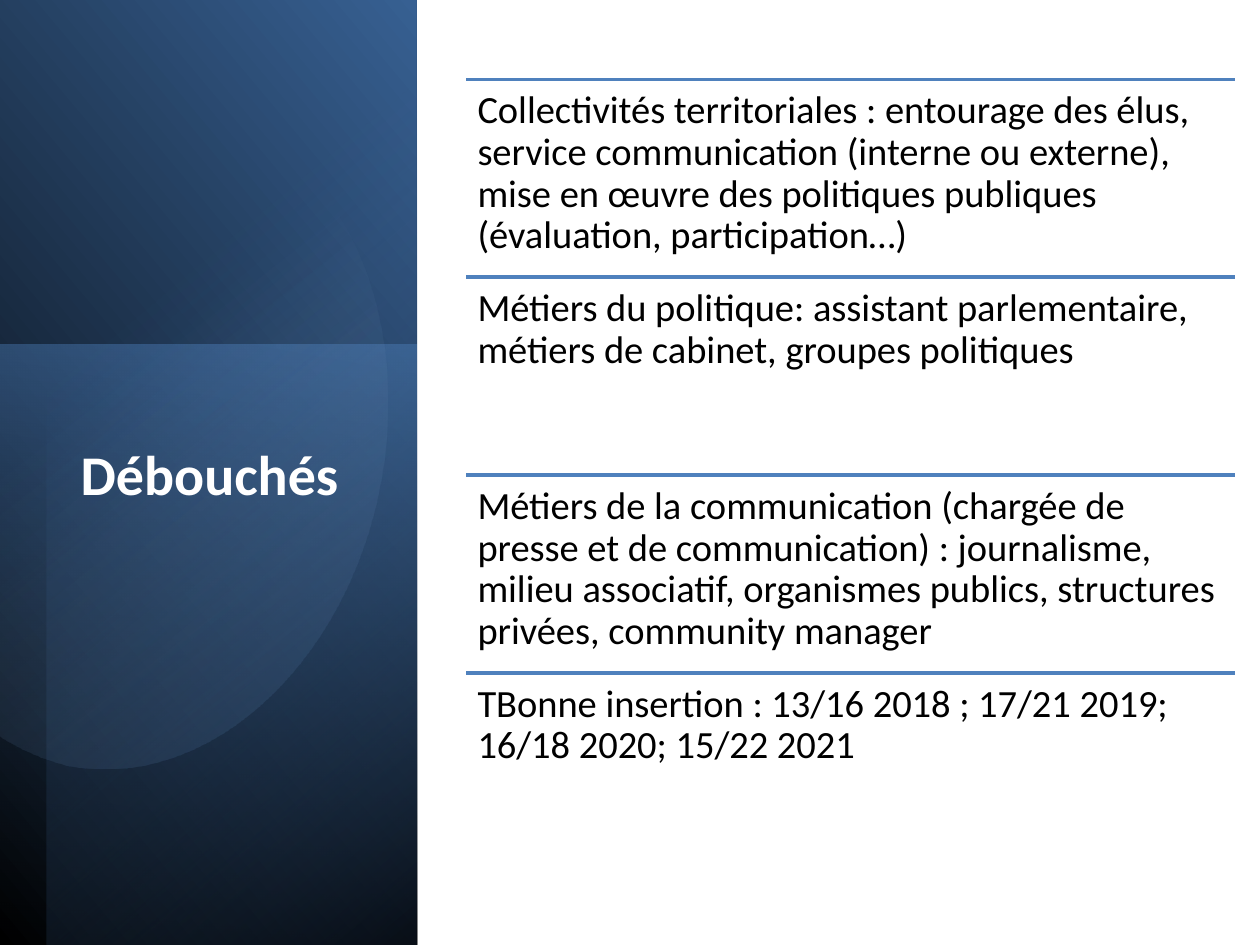
from lxml import etree
from pptx import Presentation
from pptx.dml.color import RGBColor
from pptx.enum.shapes import MSO_CONNECTOR, MSO_SHAPE
from pptx.enum.text import MSO_ANCHOR, MSO_AUTO_SIZE, PP_ALIGN
from pptx.oxml.ns import qn
from pptx.util import Inches, Pt

RECTANGLE = MSO_SHAPE.RECTANGLE
STRAIGHT = MSO_CONNECTOR.STRAIGHT
TOP = MSO_ANCHOR.TOP
LEFT = PP_ALIGN.LEFT
NO_AUTOFIT = MSO_AUTO_SIZE.NONE

BLACK = RGBColor(0x00, 0x00, 0x00)
WHITE = RGBColor(0xFF, 0xFF, 0xFF)
BLUE = RGBColor(0x4F, 0x81, 0xBD)
MID_BLUE = RGBColor(0x37, 0x60, 0x92)
DARK_BLUE = RGBColor(0x25, 0x40, 0x61)
PALE_BLUE = RGBColor(0x95, 0xB3, 0xD7)
FONT = "Calibri"

TITLE = "Débouchés"
CAREERS = [
    "Collectivités territoriales : entourage des élus, service communication "
    "(interne ou externe), mise en œuvre des politiques publiques "
    "(évaluation, participation…)",
    "Métiers du politique: assistant parlementaire, métiers de cabinet, "
    "groupes politiques",
    "Métiers de la communication (chargée de presse et de communication) : "
    "journalisme, milieu associatif, organismes publics, structures privées, "
    "community manager",
    "TBonne insertion : 13/16 2018 ; 17/21 2019; 16/18 2020; 15/22 2021",
]

PANELS = [
    dict(box=(-2.11, 2.1, 7.52, 3.31), rotation=90, flipped=True, angle=310,
         stops=[(0, BLACK, 100), (100, MID_BLUE, 100)]),
    dict(box=(-0.73, 3.46, 4.76, 3.31), rotation=270, flipped=False, angle=190,
         stops=[(0, BLUE, 50), (100, DARK_BLUE, 0)]),
    dict(box=(-1.91, 2.28, 7.5, 2.94), rotation=270, flipped=True, angle=220,
         stops=[(0, BLACK, 59), (69, BLUE, 0)]),
]

DISC_START = (1.2, 0.89)
DISC_SEGMENTS = [
    [(1.33, 0.88), (1.47, 0.89), (1.6, 0.91)],
    [(2.67, 1.13), (3.29, 2.47), (3, 3.89)],
    [(2.71, 5.31), (1.61, 6.28), (0.54, 6.07)],
    [(0.34, 6.02), (0.16, 5.94), (-0.01, 5.83)],
    [(-0.12, 5.74)],
    [(0.09, 1.38)],
    [(0.25, 1.25)],
    [(0.54, 1.04), (0.87, 0.91), DISC_START],
]
DISC_ANGLE = 52
DISC_STOPS = [(39, PALE_BLUE, 0), (100, MID_BLUE, 26)]

TITLE_BOX = (0.54, 3.03, 2.36, 3.36)
TITLE_INSET = 0.52
LIST_LEFT, LIST_TOP, LIST_WIDTH = 3.7, 0.63, 6.1
ROW_HEIGHT = 1.57
ROW_INSET = 0.09


def fill_gradient(shape, angle, stops):
    shape.shadow.inherit = False
    shape.line.fill.background()
    shape.fill.gradient()
    gradient = shape._element.spPr.find(qn("a:gradFill"))
    for child in list(gradient):
        gradient.remove(child)
    stop_list = etree.SubElement(gradient, qn("a:gsLst"))
    for position, color, opacity in stops:
        stop = etree.SubElement(stop_list, qn("a:gs"), pos=str(position * 1000))
        srgb = etree.SubElement(stop, qn("a:srgbClr"), val=str(color))
        etree.SubElement(srgb, qn("a:alpha"), val=str(opacity * 1000))
    etree.SubElement(gradient, qn("a:lin"), ang=str(angle * 60000), scaled="0")


def bend_segments(shape, segments):
    lines = list(shape._element.iter(qn("a:lnTo")))
    for line, points in zip(lines, segments):
        if len(points) == 1:
            continue
        curve = etree.Element(qn("a:cubicBezTo"))
        for x, y in points:
            etree.SubElement(curve, qn("a:pt"), x=str(Inches(x) - shape.left),
                             y=str(Inches(y) - shape.top))
        line.getparent().replace(line, curve)


def write_text(frame, text, size, color, bold=False):
    frame.word_wrap = True
    frame.auto_size = NO_AUTOFIT
    frame.vertical_anchor = TOP
    paragraph = frame.paragraphs[0]
    paragraph.alignment = LEFT
    paragraph.line_spacing = 0.9
    run = paragraph.add_run()
    run.text = text
    run.font.name = FONT
    run.font.size = Pt(size)
    run.font.bold = bold
    run.font.color.rgb = color


def add_panels(shapes):
    for panel in PANELS:
        rectangle = shapes.add_shape(RECTANGLE, *map(Inches, panel["box"]))
        rectangle.rotation = panel["rotation"]
        if panel["flipped"]:
            rectangle._element.spPr.find(qn("a:xfrm")).set("flipH", "1")
        fill_gradient(rectangle, panel["angle"], panel["stops"])


def add_disc(shapes):
    builder = shapes.build_freeform(*map(Inches, DISC_START), scale=1.0)
    corners = [tuple(map(Inches, points[-1])) for points in DISC_SEGMENTS]
    builder.add_line_segments(corners, close=True)
    disc = builder.convert_to_shape()
    bend_segments(disc, DISC_SEGMENTS)
    fill_gradient(disc, DISC_ANGLE, DISC_STOPS)


def place_title(shapes):
    title = shapes.title
    title.left, title.top, title.width, title.height = map(Inches, TITLE_BOX)
    write_text(title.text_frame, TITLE, 32, WHITE, bold=True)
    title.text_frame.margin_top = Inches(TITLE_INSET)
    shapes._spTree.append(title._element)


def add_careers(shapes):
    left, width = Inches(LIST_LEFT), Inches(LIST_WIDTH)
    for row, career in enumerate(CAREERS):
        top = Inches(LIST_TOP + row * ROW_HEIGHT)
        rule = shapes.add_connector(STRAIGHT, left, top, left + width, top)
        rule.line.color.rgb = BLUE
        rule.line.width = Pt(2)
        etree.SubElement(rule._element.spPr, qn("a:effectLst"))
        frame = shapes.add_textbox(left, top, width, Inches(ROW_HEIGHT)).text_frame
        frame.margin_left = frame.margin_right = Inches(ROW_INSET)
        frame.margin_top = frame.margin_bottom = Inches(ROW_INSET)
        write_text(frame, career, 22, BLACK)


def main():
    deck = Presentation()
    deck.slide_width, deck.slide_height = Inches(10), Inches(7.5)
    slide = deck.slides.add_slide(deck.slide_layouts.get_by_name("Title Only"))
    add_panels(slide.shapes)
    add_disc(slide.shapes)
    place_title(slide.shapes)
    add_careers(slide.shapes)
    deck.save("out.pptx")


if __name__ == "__main__":
    main()
